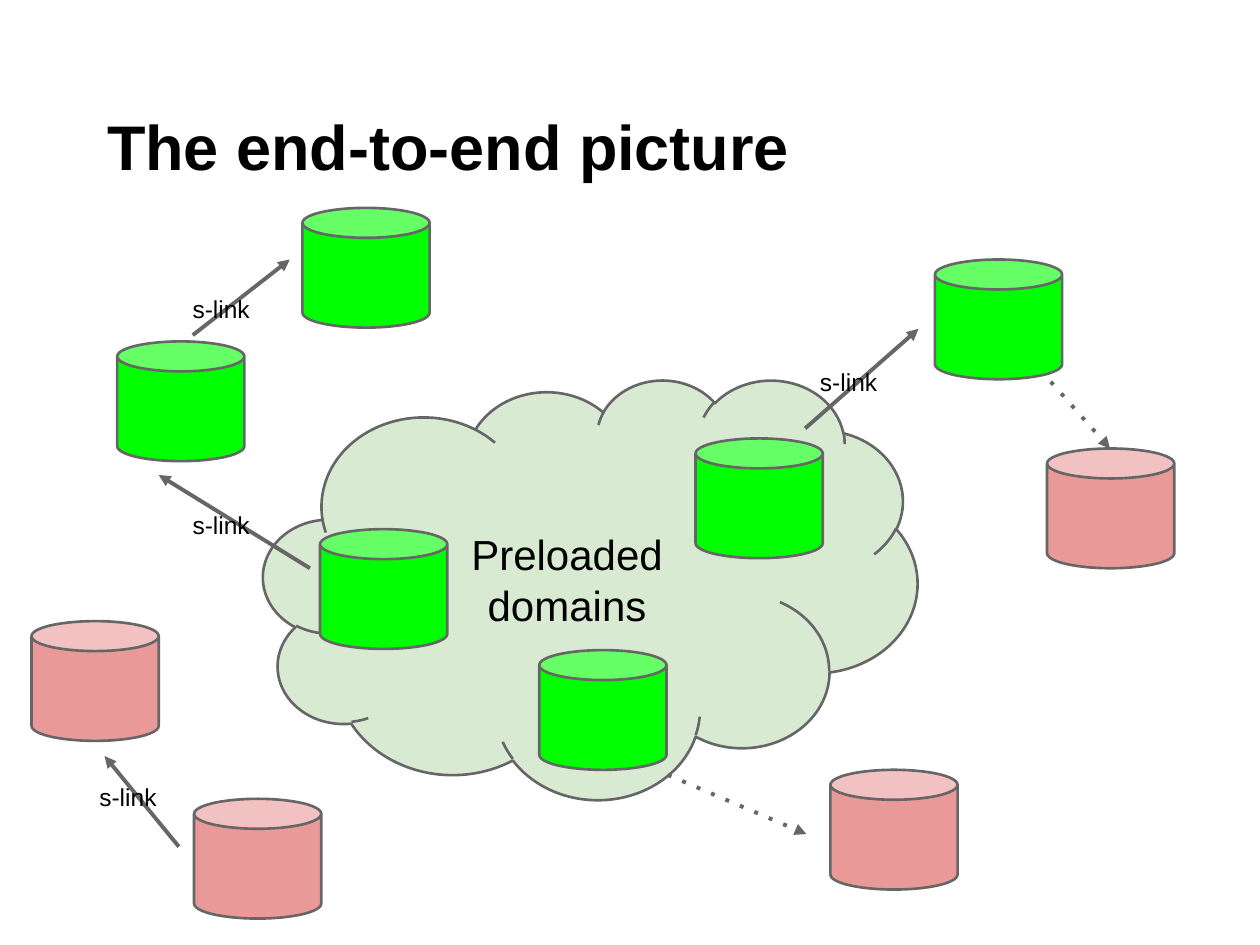
import pptx
import pptx.util
import pptx.dml.color
import pptx.enum.dml
import pptx.enum.shapes
import pptx.enum.text
import pptx.oxml.ns
from lxml import etree

Inches = pptx.util.Inches
Pt = pptx.util.Pt
MSO_SHAPE = pptx.enum.shapes.MSO_SHAPE
PP_ALIGN = pptx.enum.text.PP_ALIGN
MSO_ANCHOR = pptx.enum.text.MSO_ANCHOR
qn = pptx.oxml.ns.qn

COLORS = {
    "text": "000000",
    "line": "666666",
    "cloud": "D9EAD3",
    "secure": "00FF00",
    "insecure": "EA9999",
}
CAN_SIZE = (1.01, 0.95)
LABEL_SIZE = (0.87, 0.38)

SECURE_DOMAINS = [(2.54, 4.2), (4.28, 5.16), (5.52, 3.48),
                  (0.93, 2.71), (2.4, 1.65), (7.42, 2.06)]
INSECURE_DOMAINS = [(8.31, 3.56), (6.59, 6.11), (0.25, 4.93), (1.54, 6.34)]
S_LINKS = [((1.53, 2.66), (2.3, 2.06)), ((2.46, 4.51), (1.26, 3.77)),
           ((6.39, 3.4), (7.29, 2.61)), ((1.42, 6.72), (0.83, 6))]
PLAIN_LINKS = [((8.34, 3.03), (8.81, 3.56)), ((5.3, 6.15), (6.4, 6.62))]
LABELS = [(1.43, 3.95), (1.43, 2.23), (6.41, 2.81), (0.69, 6.11)]


def rgb(name):
    return pptx.dml.color.RGBColor.from_string(COLORS[name])


class Diagram:
    """Style and current slide, with one method per kind of element."""

    font = "Arial"
    inset = Inches(0.1)

    def __init__(self, s):
        self.s = s

    def add_text(self, shape, lines, size, align=PP_ALIGN.LEFT,
                 anchor=MSO_ANCHOR.TOP, bold=False):
        tf = shape.text_frame
        tf.word_wrap = True
        tf.auto_size = pptx.enum.text.MSO_AUTO_SIZE.NONE
        tf.vertical_anchor = anchor
        tf.margin_left = tf.margin_right = self.inset
        tf.margin_top = tf.margin_bottom = self.inset
        for i, line in enumerate(lines):
            p = tf.add_paragraph() if i else tf.paragraphs[0]
            p.alignment = align
            r = p.add_run()
            r.text = line
            r.font.name = self.font
            r.font.size = Pt(size)
            r.font.bold = bold
            r.font.color.rgb = rgb("text")
        return tf

    def title(self, text, x, y, w, h):
        sp = self.s.shapes.title
        sp.left, sp.top, sp.width, sp.height = map(Inches, (x, y, w, h))
        tf = self.add_text(sp, [text], 36, anchor=MSO_ANCHOR.BOTTOM, bold=True)
        pPr = tf.paragraphs[0]._p.get_or_add_pPr()
        pPr.set("marL", "0")
        pPr.set("indent", str(Inches(0.25)))

    def shape(self, kind, fill, x, y, w, h):
        sp = self.s.shapes.add_shape(kind, *map(Inches, (x, y, w, h)))
        sp.shadow.inherit = False
        sp.fill.solid()
        sp.fill.fore_color.rgb = rgb(fill)
        sp.line.color.rgb = rgb("line")
        sp.line.width = Pt(1.5)
        return sp

    def cloud(self, lines, *box):
        sp = self.shape(MSO_SHAPE.CLOUD, "cloud", *box)
        self.add_text(sp, lines, 24, PP_ALIGN.CENTER, MSO_ANCHOR.MIDDLE)

    def domain(self, fill, x, y):
        self.shape(MSO_SHAPE.CAN, fill, x, y, *CAN_SIZE).adjustments[0] = 0.25

    def arrow(self, start, end, dotted=False):
        c = self.s.shapes.add_connector(
            pptx.enum.shapes.MSO_CONNECTOR.STRAIGHT,
            *map(Inches, (*start, *end)))
        c.line.color.rgb = rgb("line")
        c.line.width = Pt(2.25)
        ln = c._element.spPr.find(qn("a:ln"))
        if dotted:
            c.line.dash_style = pptx.enum.dml.MSO_LINE.SQUARE_DOT
            ln.find(qn("a:prstDash")).set("val", "dot")
        etree.SubElement(ln, qn("a:tailEnd"), type="triangle",
                         w="med", len="med")
        etree.SubElement(c._element.spPr, qn("a:effectLst"))

    def label(self, text, x, y):
        sp = self.s.shapes.add_textbox(*map(Inches, (x, y, *LABEL_SIZE)))
        self.add_text(sp, [text], 14)


def main():
    prs = pptx.Presentation()
    prs.slide_width, prs.slide_height = Inches(10), Inches(7.5)
    d = Diagram(prs.slides.add_slide(prs.slide_layouts.get_by_name("Title Only")))

    d.title("The end-to-end picture", 0.5, 0.3, 9, 1.25)
    d.cloud(["Preloaded", "domains"], 2.09, 3.01, 5.19, 3.33)
    for x, y in SECURE_DOMAINS:
        d.domain("secure", x, y)
    for x, y in INSECURE_DOMAINS:
        d.domain("insecure", x, y)
    for start, end in S_LINKS:
        d.arrow(start, end)
    for start, end in PLAIN_LINKS:
        d.arrow(start, end, dotted=True)
    for x, y in LABELS:
        d.label("s-link", x, y)
    prs.save("out.pptx")


if __name__ == "__main__":
    main()
